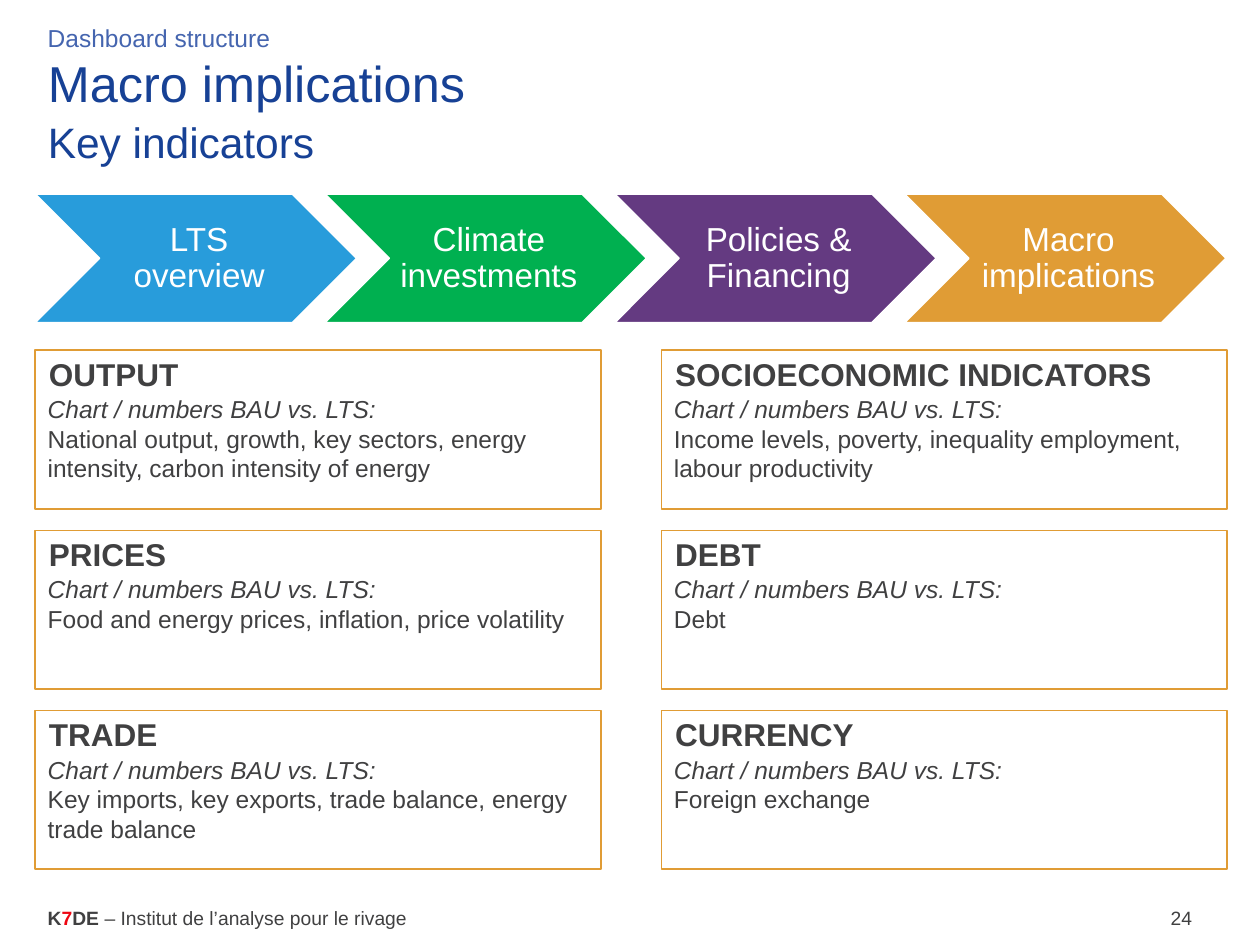
from dataclasses import dataclass

from pptx import Presentation
from pptx.dml.color import RGBColor
from pptx.enum.shapes import MSO_SHAPE
from pptx.enum.text import MSO_ANCHOR, PP_ALIGN
from pptx.util import Inches, Pt


@dataclass(frozen=True)
class Theme:
    font: str = "Arial"
    white: str = "FFFFFF"
    text: str = "404041"
    title: str = "174195"
    kicker: str = "4565AF"
    red: str = "EE0612"
    blue: str = "289CDB"
    green: str = "00B050"
    purple: str = "643A81"
    orange: str = "E09C35"
    title_size: float = 28.8
    subtitle_size: float = 24.3
    step_size: float = 19
    heading_size: float = 18
    body_size: float = 14
    footer_size: float = 11


THEME = Theme()

STEPS = [
    ("LTS overview", THEME.blue),
    ("Climate investments", THEME.green),
    ("Policies & Financing", THEME.purple),
    ("Macro implications", THEME.orange),
]
STEP_LEFT, STEP_PITCH = 0.28, 2.3

# Each row holds the left and the right card
CARDS = [
    [("OUTPUT", "National output, growth, key sectors, energy intensity, "
                "carbon intensity of energy"),
     ("SOCIOECONOMIC INDICATORS", "Income levels, poverty, inequality "
                                  "employment, labour productivity")],
    [("PRICES", "Food and energy prices, inflation, price volatility"),
     ("DEBT", "Debt")],
    [("TRADE", "Key imports, key exports, trade balance, energy trade balance"),
     ("CURRENCY", "Foreign exchange")],
]
CARD_LEFT, CARD_TOP = 0.28, 2.78
CARD_PITCH_X, CARD_PITCH_Y = 4.97, 1.43
CARD_LEAD = "Chart / numbers BAU vs. LTS:"


def style_run(r, size, color, bold=False, italic=False):
    r.font.name = THEME.font
    r.font.size = Pt(size)
    r.font.bold = bold
    r.font.italic = italic
    r.font.color.rgb = RGBColor.from_string(color)


def set_insets(tf, left, top, right, bottom):
    tf.margin_left, tf.margin_top = Inches(left), Inches(top)
    tf.margin_right, tf.margin_bottom = Inches(right), Inches(bottom)


def place(sp, left, top, width, height):
    sp.left, sp.top = Inches(left), Inches(top)
    sp.width, sp.height = Inches(width), Inches(height)


def add_text(s, box, text, size, color, bold=False,
             align=PP_ALIGN.LEFT, anchor=MSO_ANCHOR.TOP):
    sp = s.shapes.add_textbox(*map(Inches, box))
    tf = sp.text_frame
    tf.word_wrap = True
    tf.vertical_anchor = anchor
    tf.text = text
    p = tf.paragraphs[0]
    p.alignment = align
    for r in p.runs:
        style_run(r, size, color, bold)
    return sp


def add_title(s):
    sp = s.shapes.title
    place(sp, 0.28, 0.46, 9.45, 0.79)
    tf = sp.text_frame
    tf.text = "Macro implications\vKey indicators"
    tf.vertical_anchor = MSO_ANCHOR.MIDDLE
    p = tf.paragraphs[0]
    p.alignment = PP_ALIGN.LEFT
    p.line_spacing = 1.06
    for r, size in zip(p.runs, (THEME.title_size, THEME.subtitle_size)):
        style_run(r, size, THEME.title)


def add_step(s, left, text, color):
    sp = s.shapes.add_shape(MSO_SHAPE.CHEVRON, Inches(left), Inches(1.54),
                            Inches(2.55), Inches(1.02))
    sp.shadow.inherit = False
    sp.fill.solid()
    sp.fill.fore_color.rgb = RGBColor.from_string(color)
    sp.line.color.rgb = RGBColor.from_string(THEME.white)
    sp.line.width = Pt(0.85)
    tf = sp.text_frame
    tf.word_wrap = True
    tf.vertical_anchor = MSO_ANCHOR.MIDDLE
    set_insets(tf, 0.08, 0.03, 0.03, 0.03)
    tf.text = text
    p = tf.paragraphs[0]
    p.alignment = PP_ALIGN.CENTER
    p.line_spacing = 0.9
    style_run(p.runs[0], THEME.step_size, THEME.white)


def add_card(s, left, top, heading, detail):
    sp = s.shapes.add_shape(MSO_SHAPE.RECTANGLE, Inches(left), Inches(top),
                            Inches(4.49), Inches(1.26))
    sp.shadow.inherit = False
    sp.fill.background()
    sp.line.color.rgb = RGBColor.from_string(THEME.orange)
    sp.line.width = Pt(1)
    tf = sp.text_frame
    tf.word_wrap = True
    tf.vertical_anchor = MSO_ANCHOR.TOP
    set_insets(tf, 0.1, 0.35, 0.1, 0.05)
    tf.text = f"{CARD_LEAD}\n{detail}"
    for p, italic in zip(tf.paragraphs, (True, False)):
        p.alignment = PP_ALIGN.LEFT
        style_run(p.runs[0], THEME.body_size, THEME.text, italic=italic)
    add_text(s, (left + 0.01, top, 4.48, 0.37), heading, THEME.heading_size,
             THEME.text, bold=True, anchor=MSO_ANCHOR.MIDDLE)


def add_footer(s):
    sp = add_text(s, (0.28, 7.14, 3.8, 0.29), "K", THEME.footer_size,
                  THEME.text, bold=True)
    p = sp.text_frame.paragraphs[0]
    for text, color, bold in (
        ("7", THEME.red, True),
        ("DE ", THEME.text, True),
        ("– Institut de l’analyse pour le rivage", THEME.text, False),
    ):
        r = p.add_run()
        r.text = text
        style_run(r, THEME.footer_size, color, bold)
    add_text(s, (8.78, 7.14, 0.78, 0.29), "24", THEME.footer_size, THEME.text,
             align=PP_ALIGN.RIGHT, anchor=MSO_ANCHOR.MIDDLE)


def main():
    prs = Presentation()
    prs.slide_width, prs.slide_height = Inches(10), Inches(7.5)
    s = prs.slides.add_slide(prs.slide_layouts[5])

    # Header
    add_title(s)
    add_text(s, (0.28, 0.13, 9.45, 0.32), "Dashboard structure",
             THEME.body_size, THEME.kicker)

    # Process chevrons
    for i, (text, color) in enumerate(STEPS):
        add_step(s, STEP_LEFT + i * STEP_PITCH, text, color)

    # Indicator cards
    for row, cards in enumerate(CARDS):
        for col, (heading, detail) in enumerate(cards):
            add_card(s, CARD_LEFT + col * CARD_PITCH_X,
                     CARD_TOP + row * CARD_PITCH_Y, heading, detail)

    add_footer(s)
    prs.save("out.pptx")


if __name__ == "__main__":
    main()
